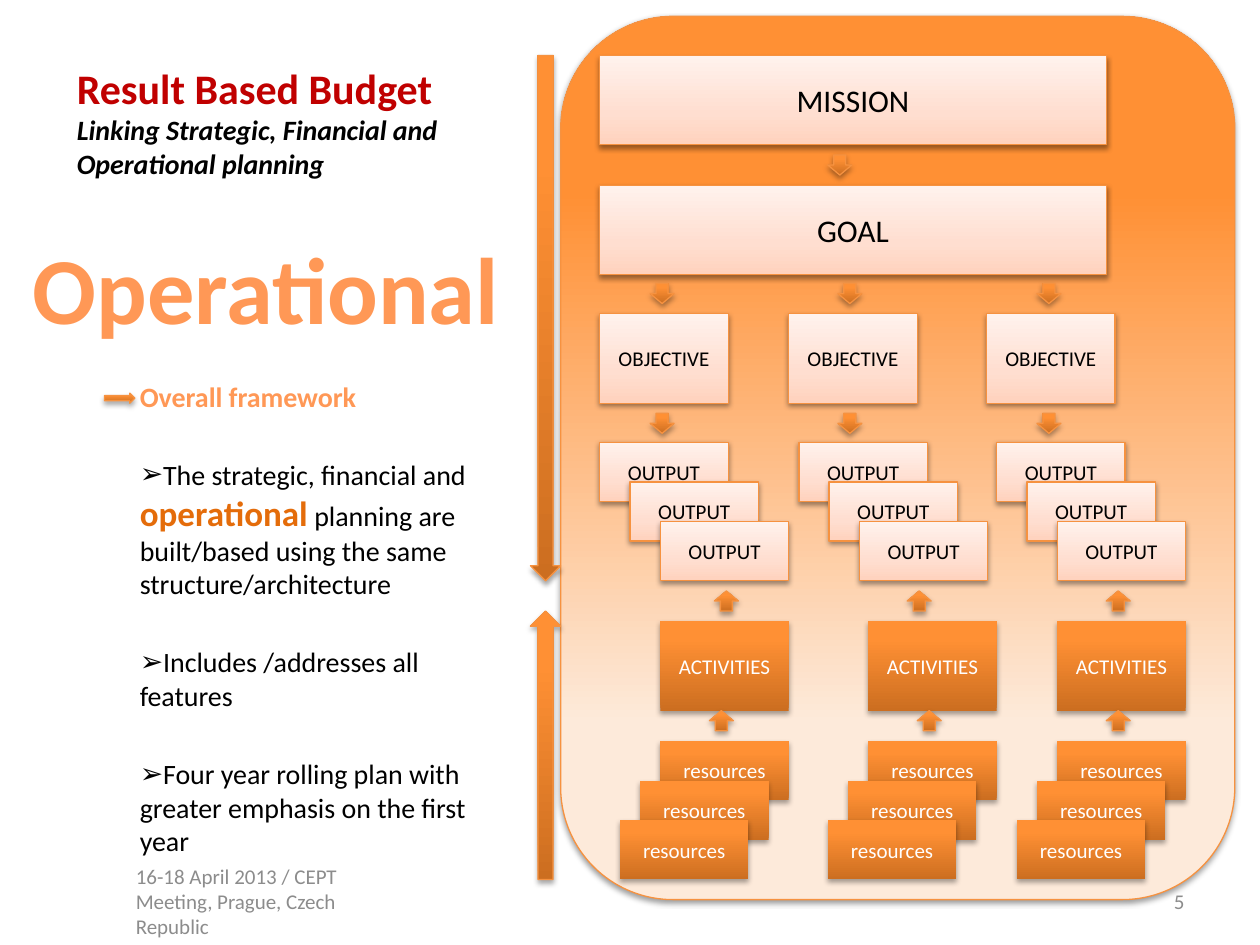
from copy import deepcopy

from lxml.etree import SubElement
from pptx import Presentation
from pptx.dml.color import RGBColor
from pptx.enum.shapes import MSO_SHAPE as Preset
from pptx.enum.text import MSO_ANCHOR as Anchor, MSO_AUTO_SIZE as AutoSize, PP_ALIGN as Align
from pptx.oxml.ns import qn
from pptx.util import Inches, Pt

FONT = "Calibri"
BLACK, WHITE, GREY = "000000", "FFFFFF", "8C8C8C"
RED, ORANGE, PEACH, EDGE = "C00000", "E46C0A", "FF9856", "F69240"

# Gradient stops run from the bottom of a shape to its top.
PANEL = dict(stops=[(20, "FDEADA"), (80, "FF9034"), (100, "FF9136")], line=EDGE, alpha=38, drop=1.6)
LIGHT = dict(stops=[(0, "FFD2BD"), (35, "FFDED0"), (100, "FFF2ED")], line=EDGE, alpha=38, drop=1.6)
DARK = dict(stops=[(0, "CC6E20"), (80, "FF9034"), (100, "FF9136")], line=None, alpha=35, drop=1.8)
ARROW = {**DARK, "line": EDGE}

TITLE = [
    ("Result Based Budget", dict(size=24, color=RED, bold=True)),
    ("Linking Strategic, Financial and Operational planning",
     dict(size=16, color=BLACK, bold=True, italic=True)),
]
HEADING = "Overall framework"
POINTS = [
    [("The strategic, financial and ", {}),
     ("operational", dict(size=20, color=ORANGE, bold=True)),
     (" planning are built/based using the same structure/architecture", {})],
    [("Includes /addresses all features", {})],
    [("Four year rolling plan with greater emphasis on the first year", {})],
]

# label, top, width, height, lefts, text size, style
BOX_ROWS = [
    ("MISSION", 0.44, 4.02, 0.71, [4.76], 18, LIGHT),
    ("GOAL", 1.47, 4.02, 0.71, [4.76], 18, LIGHT),
    ("OBJECTIVE", 2.49, 1.02, 0.71, [4.76, 6.26, 7.83], 12, LIGHT),
    ("ACTIVITIES", 4.93, 1.02, 0.71, [5.24, 6.89, 8.39], 12, DARK),
]
# label, top, lefts, sideways step, style
STACKS = [
    ("OUTPUT", 3.51, [4.76, 6.34, 7.91], 0.24, LIGHT),
    ("resources", 5.88, [5.24, 6.89, 8.39], -0.16, DARK),
]
STACK_SIZE, STACK_DROP = 3, 0.315
# preset, top, lefts
ARROW_ROWS = [
    (Preset.DOWN_ARROW, 1.23, [6.57]),
    (Preset.DOWN_ARROW, 2.25, [5.16, 6.65, 8.23]),
    (Preset.DOWN_ARROW, 3.28, [5.16, 6.65, 8.23]),
    (Preset.UP_ARROW, 4.69, [5.67, 7.2, 8.78]),
    (Preset.UP_ARROW, 5.64, [5.63, 7.28, 8.78]),
]
SIDE_ARROWS = [
    (Preset.DOWN_ARROW, (4.21, 0.44, 0.24, 4.17)),
    (Preset.UP_ARROW, (4.21, 4.85, 0.24, 2.13)),
    (Preset.RIGHT_ARROW, (0.83, 3.12, 0.24, 0.08)),
]


def rgb(color):
    return RGBColor.from_string(color)


def add_span(para, text, size=16, color=BLACK, bold=False, italic=False):
    span = para.add_run()
    span.text = text
    font = span.font
    font.name, font.size, font.bold, font.italic = FONT, Pt(size), bold, italic
    font.color.rgb = rgb(color)


def place(shape, at):
    shape.left, shape.top, shape.width, shape.height = map(Inches, at)


def add_gradient_shape(slide, preset, at, stops, line, alpha, drop):
    """Add a preset shape with a three-stop vertical gradient and a soft shadow below."""
    shape = slide.shapes.add_shape(preset, *map(Inches, at))
    shape.fill.gradient()
    shape.fill.gradient_angle = 90
    stop_list = shape._element.spPr.find(".//" + qn("a:gsLst"))
    stop_list.append(deepcopy(stop_list[0]))
    for stop, (position, color) in zip(shape.fill.gradient_stops, stops):
        stop.position = position / 100
        stop.color.rgb = rgb(color)
    if line:
        shape.line.color.rgb = rgb(line)
        shape.line.width = Pt(0.75)
    else:
        shape.line.fill.background()
    shape.shadow.inherit = False
    effects = shape._element.spPr.find(qn("a:effectLst"))
    shadow = SubElement(effects, qn("a:outerShdw"), blurRad=str(Pt(3.1)), dist=str(Pt(drop)),
                        dir="5400000", rotWithShape="0")
    tint = SubElement(shadow, qn("a:srgbClr"), val=BLACK)
    SubElement(tint, qn("a:alpha"), val=str(alpha * 1000))
    return shape


def add_box(slide, label, at, size, style):
    box = add_gradient_shape(slide, Preset.RECTANGLE, at, **style)
    box.text_frame.vertical_anchor = Anchor.MIDDLE
    para = box.text_frame.paragraphs[0]
    para.alignment = Align.CENTER
    add_span(para, label, size, WHITE if style is DARK else BLACK)


def add_label(slide, text, at, align=Align.LEFT, anchor=Anchor.MIDDLE, wrap=True, **style):
    frame = slide.shapes.add_textbox(*map(Inches, at)).text_frame
    frame.word_wrap, frame.vertical_anchor = wrap, anchor
    para = frame.paragraphs[0]
    para.alignment = align
    add_span(para, text, **style)


def add_diagram(slide):
    add_gradient_shape(slide, Preset.ROUNDED_RECTANGLE, (4.45, 0.13, 5.35, 7.01), **PANEL)
    for label, top, width, height, lefts, size, style in BOX_ROWS:
        for left in lefts:
            add_box(slide, label, (left, top, width, height), size, style)
    for label, top, lefts, step, style in STACKS:
        for left in lefts:
            for i in range(STACK_SIZE):
                at = (left + i * step, top + i * STACK_DROP, 1.02, 0.47)
                add_box(slide, label, at, 12, style)
    for preset, top, lefts in ARROW_ROWS:
        for left in lefts:
            add_gradient_shape(slide, preset, (left, top, 0.19, 0.16), **ARROW)
    for preset, at in SIDE_ARROWS:
        add_gradient_shape(slide, preset, at, **ARROW)


def fill_title(title):
    place(title, (0.51, 0.21, 3.29, 1.27))
    frame = title.text_frame
    frame.auto_size, frame.vertical_anchor = AutoSize.NONE, Anchor.BOTTOM
    para = frame.paragraphs[0]
    for i, (text, style) in enumerate(TITLE):
        if i:
            para.add_line_break()
        add_span(para, text, **style)


def fill_body(body):
    place(body, (0.51, 2.33, 3.29, 4.69))
    frame = body.text_frame
    frame.auto_size, frame.vertical_anchor = AutoSize.NONE, Anchor.TOP
    frame.margin_top = Inches(0.68)
    heading = frame.paragraphs[0]
    heading.level, heading.space_before = 1, Pt(0)
    add_span(heading, HEADING, color=PEACH, bold=True)
    for point in POINTS:
        para = frame.add_paragraph()
        SubElement(para._p.get_or_add_pPr(), qn("a:buChar"), char="➢")
        para.level, para.space_before = 1, Pt(25.5)
        for text, style in point:
            add_span(para, text, **style)


def main():
    deck = Presentation()
    deck.slide_width, deck.slide_height = Inches(10), Inches(7.5)
    slide = deck.slides.add_slide(deck.slide_layouts.get_by_name("Content with Caption"))
    holders = {holder.placeholder_format.idx: holder for holder in slide.placeholders}
    unused = holders[1]._element
    unused.getparent().remove(unused)

    add_diagram(slide)
    fill_title(holders[0])
    fill_body(holders[2])
    add_label(slide, "Operational", (0.14, 1.78, 3.94, 1.01), align=Align.CENTER,
              anchor=Anchor.TOP, wrap=False, size=54, color=PEACH, bold=True)
    add_label(slide, "16-18 April 2013 / CEPT Meeting, Prague, Czech Republic",
              (0.98, 6.95, 2.33, 0.4), size=12, color=GREY)
    add_label(slide, "5", (7.17, 6.95, 2.33, 0.4), align=Align.RIGHT, size=12, color=GREY)
    deck.save("out.pptx")


if __name__ == "__main__":
    main()
